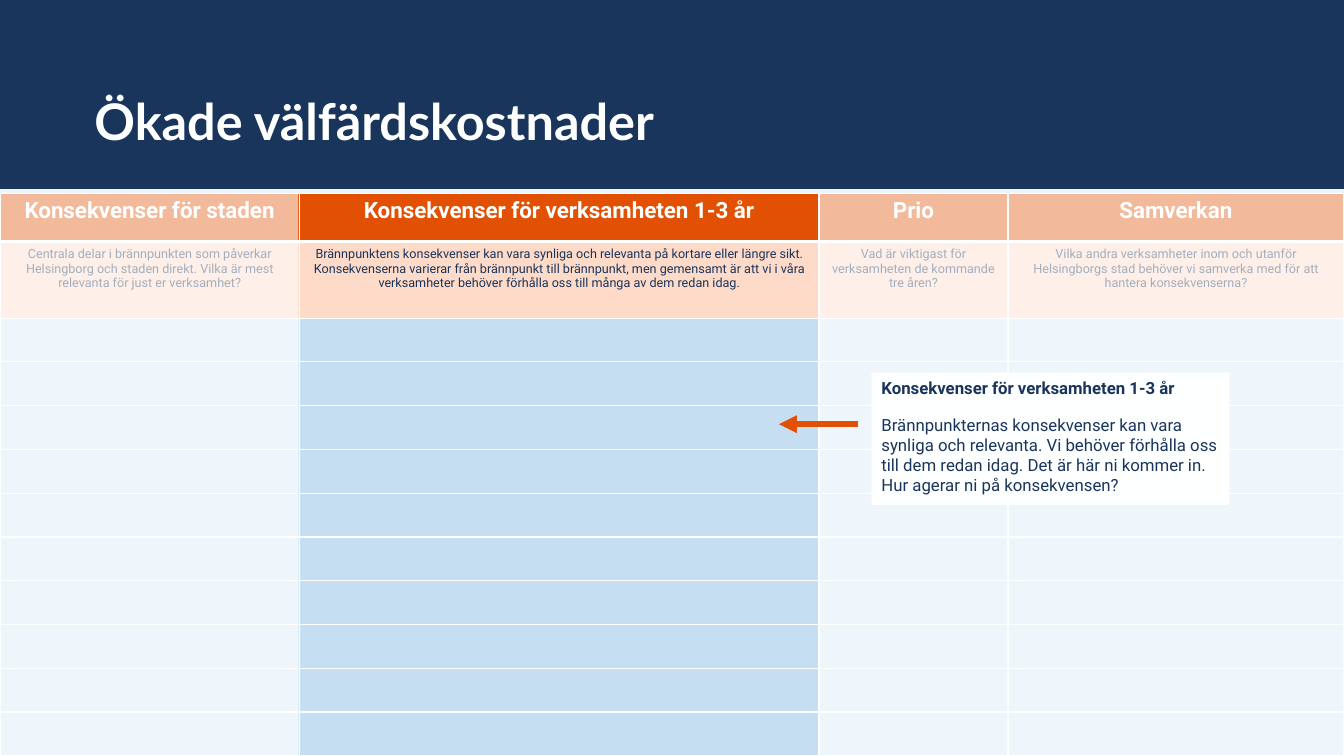
from lxml.etree import SubElement
from pptx import Presentation
from pptx.dml.color import RGBColor
from pptx.enum.shapes import MSO_CONNECTOR as CONNECTOR, MSO_SHAPE as SHAPE
from pptx.enum.text import MSO_ANCHOR as ANCHOR, PP_ALIGN as ALIGN
from pptx.oxml.ns import qn
from pptx.util import Pt

PX = 9525  # EMU per pixel, 96 pixels to the inch
NAVY, WHITE, ORANGE = "1A355C", "FEFFFF", "E25103"
PEACH, BLUE, PALE = "FEDBC8", "C6DEF2", "EEF5FB"


def paint(fill, color, opacity=100):
    """Give a solid fill, with opacity in percent."""
    fill.solid()
    fill.fore_color.rgb = RGBColor.from_string(color)
    if opacity < 100:
        color_element = fill._xPr.find(qn("a:solidFill"))[0]
        SubElement(color_element, qn("a:alpha"), val=str(opacity * 1000))


def write(paragraph, text, size, color, bold=False, name="Roboto"):
    paragraph.text = text
    font = paragraph.font
    font.name, font.size, font.bold = name, Pt(size), bold
    font.color.rgb = RGBColor.from_string(color)


presentation = Presentation()
presentation.slide_width, presentation.slide_height = 1280 * PX, 720 * PX
slide = presentation.slides.add_slide(presentation.slide_layouts[6])
paint(slide.background.fill, PALE)

# Table
TABLE_TOP, TABLE_HEIGHT = 184, 536
COLUMN_WIDTHS = [285, 495, 180, 320]
HEADER_HEIGHT, QUESTION_HEIGHT, EMPTY_ROWS = 46, 73, 10
FOCUS_COLUMN = 1
headers = ["Konsekvenser för staden", "Konsekvenser för verksamheten 1-3 år", "Prio", "Samverkan"]
questions = [
    "Centrala delar i brännpunkten som påverkar Helsingborg och staden direkt. "
    "Vilka är mest relevanta för just er verksamhet?",
    "Brännpunktens konsekvenser kan vara synliga och relevanta på kortare eller längre sikt. "
    "Konsekvenserna varierar från brännpunkt till brännpunkt, men gemensamt är att vi i våra "
    "verksamheter behöver förhålla oss till många av dem redan idag.",
    "Vad är viktigast för verksamheten de kommande tre åren?",
    "Vilka andra verksamheter inom och utanför Helsingborgs stad behöver vi samverka med "
    "för att hantera konsekvenserna?",
]
table = slide.shapes.add_table(
    EMPTY_ROWS + 2, len(headers), 0, TABLE_TOP * PX, 1280 * PX, TABLE_HEIGHT * PX
).table
table.horz_banding = False
for column, width in zip(table.columns, COLUMN_WIDTHS):
    column.width = width * PX
empty_height = (TABLE_HEIGHT - HEADER_HEIGHT - QUESTION_HEIGHT) * PX // EMPTY_ROWS
row_heights = [HEADER_HEIGHT * PX, QUESTION_HEIGHT * PX] + [empty_height] * EMPTY_ROWS

for row_index, height in enumerate(row_heights):
    table.rows[row_index].height = height
    for column_index in range(len(headers)):
        cell = table.cell(row_index, column_index)
        properties = cell._tc.get_or_add_tcPr()
        for side in "LRTB":
            thick = (row_index, side) in [(0, "B"), (1, "T")]
            border = SubElement(properties, qn(f"a:ln{side}"), w=str(Pt(3 if thick else 1)))
            border_fill = SubElement(border, qn("a:solidFill"))
            SubElement(border_fill, qn("a:srgbClr"), val=WHITE)
        paragraph = cell.text_frame.paragraphs[0]
        paragraph.alignment = ALIGN.CENTER
        if row_index == 0:
            write(paragraph, headers[column_index], 16, WHITE, bold=True)
            paint(cell.fill, ORANGE)
        elif row_index == 1:
            write(paragraph, questions[column_index], 9, NAVY)
            paint(cell.fill, PEACH)
        else:
            paragraph.font.size = Pt(9)
            paint(cell.fill, BLUE, 100 if column_index == FOCUS_COLUMN else 50)

# Title band, veils over the columns out of focus, and the callout box
rectangles = [
    (0, 0, 1280, 180, NAVY, 100),
    (0, TABLE_TOP, 284, TABLE_HEIGHT, WHITE, 60),
    (780, TABLE_TOP, 500, TABLE_HEIGHT, WHITE, 60),
    (830, 355, 341, 126, WHITE, 100),
]
for left, top, width, height, color, opacity in rectangles:
    shape = slide.shapes.add_shape(SHAPE.RECTANGLE, left * PX, top * PX, width * PX, height * PX)
    shape.shadow.inherit = False
    shape.line.fill.background()
    paint(shape.fill, color, opacity)

callout = shape.text_frame
callout.word_wrap = True
callout.vertical_anchor = ANCHOR.TOP
heading, body = callout.paragraphs[0], callout.add_paragraph()
write(heading, headers[FOCUS_COLUMN], 12, NAVY, bold=True)
write(
    body,
    "Brännpunkternas konsekvenser kan vara synliga och relevanta. Vi behöver förhålla oss "
    "till dem redan idag. Det är här ni kommer in. Hur agerar ni på konsekvensen?",
    12,
    NAVY,
)
body.space_before = Pt(12)
heading.alignment = body.alignment = ALIGN.LEFT

# Title
title = slide.shapes.add_textbox(90 * PX, 23 * PX, 960 * PX, 121 * PX).text_frame
title.word_wrap = True
title.vertical_anchor = ANCHOR.BOTTOM
title.margin_left = title.margin_right = title.margin_top = title.margin_bottom = 0
write(title.paragraphs[0], "Ökade välfärdskostnader", 36, WHITE, bold=True, name="Lato")
title.paragraphs[0].line_spacing = 0.9

# Arrow from the callout to the column in focus
arrow = slide.shapes.add_connector(CONNECTOR.STRAIGHT, 817 * PX, 404 * PX, 742 * PX, 404 * PX)
arrow.line.width = Pt(4.25)
arrow.line.color.rgb = RGBColor.from_string(ORANGE)
SubElement(arrow.line._get_or_add_ln(), qn("a:tailEnd"), type="triangle")
SubElement(arrow._element.spPr, qn("a:effectLst"))

presentation.save("out.pptx")
